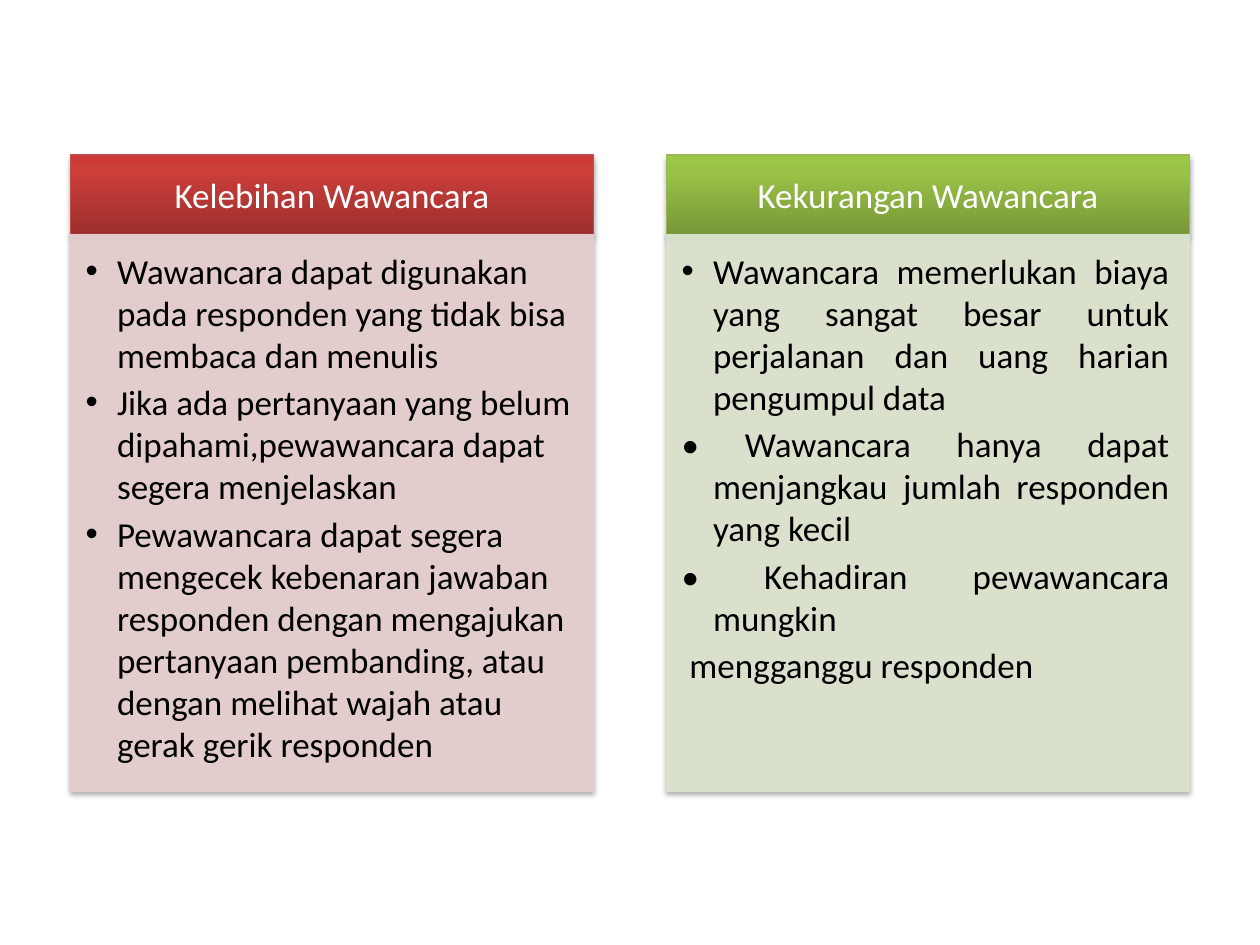
from lxml.etree import SubElement
from pptx import Presentation
from pptx.dml.color import RGBColor
from pptx.enum.shapes import MSO_SHAPE
from pptx.enum.text import MSO_ANCHOR, PP_ALIGN
from pptx.oxml import parse_xml
from pptx.oxml.ns import nsdecls, qn
from pptx.util import Pt

COLORS = {
    "white": "FFFFFF",
    "black": "000000",
    "red_stops": {0: "9C2F2D", 80: "CB3E3A", 100: "CE3B37"},
    "red_line": "BF4C48",
    "red_body": "E8D0D0",
    "red_body_line": "E3CBCB",
    "green_stops": {0: "779737", 80: "9BC348", 100: "9DC746"},
    "green_line": "98B955",
    "green_body": "DEE7D1",
    "green_body_line": "D9E2CC",
}
SLIDE_WIDTH, SLIDE_HEIGHT = 720, 540
COLUMN_WIDTH, COLUMN_HEIGHT = 298.8, 363.6
COLUMN_TOP, SIDE_MARGIN = 88.6, 40.3
HEADER_HEIGHT = 45.4
INDENT = 18
SPACE_WIDTH = 4.5
HANGING, SHIFTED = -INDENT, SPACE_WIDTH - INDENT

COLUMNS = [
    {
        "name": "red",
        "title": "Kelebihan Wawancara",
        "alignment": PP_ALIGN.LEFT,
        "points": [
            ("Wawancara dapat digunakan pada responden yang tidak bisa membaca dan menulis", True, HANGING),
            ("Jika ada pertanyaan yang belum dipahami,pewawancara dapat segera menjelaskan", True, HANGING),
            ("Pewawancara dapat segera mengecek kebenaran jawaban responden dengan mengajukan "
             "pertanyaan pembanding, atau dengan melihat wajah atau gerak gerik responden", True, HANGING),
        ],
    },
    {
        "name": "green",
        "title": "Kekurangan Wawancara",
        "alignment": PP_ALIGN.JUSTIFY,
        "points": [
            ("Wawancara memerlukan biaya yang sangat besar untuk perjalanan dan uang harian "
             "pengumpul data", True, HANGING),
            ("• Wawancara hanya dapat menjangkau jumlah responden yang kecil", False, HANGING),
            ("• Kehadiran pewawancara mungkin", False, HANGING),
            ("mengganggu responden", False, SHIFTED),
        ],
    },
]


def set_values(target, values):
    for name, value in values.items():
        setattr(target, name, value)


def add_shadow(shape):
    shape.shadow.inherit = False
    effects = shape._element.spPr.find(qn("a:effectLst"))
    effects.append(parse_xml(
        f'<a:outerShdw {nsdecls("a")} blurRad="{Pt(3.1)}" dist="{Pt(1.8)}" dir="5400000" rotWithShape="0">'
        f'<a:srgbClr val="{COLORS["black"]}"><a:alpha val="35000"/></a:srgbClr></a:outerShdw>'))


def set_gradient(shape, stops):
    shape.fill.gradient()
    shape.fill.gradient_angle = 90
    stop_list = shape._element.spPr.find(qn("a:gradFill")).find(qn("a:gsLst"))
    for stop in list(stop_list):
        stop_list.remove(stop)
    for position, color in stops.items():
        stop = SubElement(stop_list, qn("a:gs"), pos=str(position * 1000))
        SubElement(stop, qn("a:srgbClr"), val=color)


def set_opacity(fill, percent):
    color = fill._xPr.find(qn("a:solidFill"))[0]
    SubElement(color, qn("a:alpha"), val=str(percent * 1000))


def add_box(slide, left, top, width, height, line_color, frame_format):
    shape = slide.shapes.add_shape(MSO_SHAPE.RECTANGLE, Pt(left), Pt(top), Pt(width), Pt(height))
    shape.line.color.rgb = RGBColor.from_string(line_color)
    shape.line.width = Pt(0.75)
    add_shadow(shape)
    set_values(shape.text_frame, {"word_wrap": True, **frame_format})
    return shape


def write_paragraph(paragraph, text, color, paragraph_format):
    paragraph.text = text
    set_values(paragraph, paragraph_format)
    set_values(paragraph.font, {"name": "Calibri", "size": Pt(20)})
    paragraph.font.color.rgb = RGBColor.from_string(COLORS[color])


def add_header(slide, left, top, width, height, column):
    name = column["name"]
    shape = add_box(slide, left, top, width, height, COLORS[f"{name}_line"], {
        "vertical_anchor": MSO_ANCHOR.MIDDLE,
        "margin_left": Pt(11.5), "margin_right": Pt(11.5),
        "margin_top": Pt(6.5), "margin_bottom": Pt(6.5),
    })
    set_gradient(shape, COLORS[f"{name}_stops"])
    write_paragraph(shape.text_frame.paragraphs[0], column["title"], "white",
                    {"alignment": PP_ALIGN.CENTER, "space_after": Pt(7)})


def add_body(slide, left, top, width, height, column):
    name = column["name"]
    shape = add_box(slide, left, top, width, height, COLORS[f"{name}_body_line"], {
        "vertical_anchor": MSO_ANCHOR.TOP,
        "margin_left": Pt(8.6), "margin_right": Pt(11.5),
        "margin_top": Pt(8.6), "margin_bottom": Pt(12.2),
    })
    shape.fill.solid()
    shape.fill.fore_color.rgb = RGBColor.from_string(COLORS[f"{name}_body"])
    for fill in (shape.fill, shape.line.fill):
        set_opacity(fill, 90)
    frame = shape.text_frame
    for index, (text, bulleted, first_indent) in enumerate(column["points"]):
        paragraph = frame.add_paragraph() if index else frame.paragraphs[0]
        properties = paragraph._p.get_or_add_pPr()
        properties.set("marL", str(Pt(INDENT)))
        properties.set("indent", str(Pt(first_indent)))
        if bulleted:
            SubElement(properties, qn("a:buFont"), typeface="Arial")
            SubElement(properties, qn("a:buChar"), char="•")
        write_paragraph(paragraph, text, "black",
                        {"alignment": column["alignment"], "space_after": Pt(3)})


def add_column(slide, left, top, width, height, column):
    add_header(slide, left, top, width, HEADER_HEIGHT, column)
    add_body(slide, left, top + HEADER_HEIGHT, width, height - HEADER_HEIGHT, column)


def main():
    presentation = Presentation()
    set_values(presentation, {"slide_width": Pt(SLIDE_WIDTH), "slide_height": Pt(SLIDE_HEIGHT)})
    slide = presentation.slides.add_slide(presentation.slide_layouts[6])
    step = SLIDE_WIDTH - 2 * SIDE_MARGIN - COLUMN_WIDTH
    for index, column in enumerate(COLUMNS):
        add_column(slide, SIDE_MARGIN + index * step, COLUMN_TOP, COLUMN_WIDTH, COLUMN_HEIGHT, column)
    presentation.save("out.pptx")


if __name__ == "__main__":
    main()
